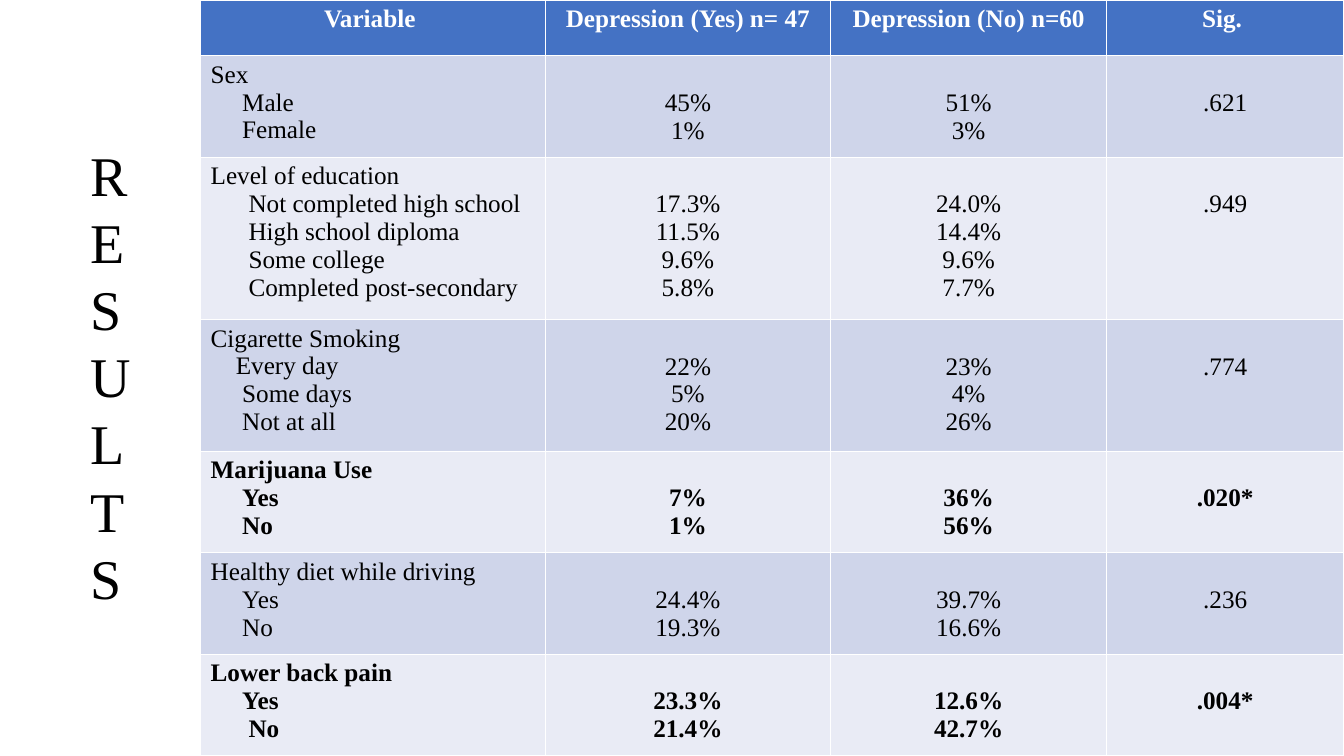
from pptx import Presentation
from pptx.dml.color import RGBColor
from pptx.enum import text
from pptx.util import Pt

TITLE = "RESULTS"
HEADINGS = ["Variable ", "Depression (Yes) n= 47", "Depression (No) n=60", "Sig. "]
# Variable, significance, bold, then (indent in points, option, yes, no)
VARIABLES = [
    ("Sex", ".621", False, [
        (22.5, "Male", "45%", "51%"),
        (22.5, "Female", "1%", "3%")]),
    ("Level of education", ".949", False, [
        (27, "Not completed high school", "17.3%", "24.0%"),
        (27, "High school diploma", "11.5%", "14.4%"),
        (27, "Some college", "9.6%", "9.6%"),
        (27, "Completed post-secondary", "5.8%", "7.7%")]),
    ("Cigarette Smoking", ".774", False, [
        (18, "Every day", "22%", "23%"),
        (22.5, "Some days", "5%", "4%"),
        (22.5, "Not at all", "20%", "26%")]),
    ("Marijuana Use", ".020*", True, [
        (22.5, "Yes", "7%", "36%"),
        (22.5, "No", "1%", "56%")]),
    ("Healthy diet while driving", ".236", False, [
        (22.5, "Yes", "24.4%", "39.7%"),
        (22.5, "No", "19.3%", "16.6%")]),
    ("Lower back pain", ".004*", True, [
        (22.5, "Yes", "23.3%", "12.6%"),
        (27, "No", "21.4%", "42.7%")]),
]

FONT = "Times New Roman"
BLACK = RGBColor(0x00, 0x00, 0x00)
WHITE = RGBColor(0xFF, 0xFF, 0xFF)
HEADER_BLUE = RGBColor(0x44, 0x72, 0xC4)
BANDS = [RGBColor(0xCF, 0xD5, 0xEA), RGBColor(0xE9, 0xEB, 0xF5)]

SLIDE_WIDTH, SLIDE_HEIGHT = 960, 540
TABLE_LEFT = 143.3
COLUMN_WIDTHS = [246.2, 203.8, 197.3, 169.2]
HEADER_HEIGHT = 39.75
ROW_PADDING, ROW_LINE = 7.25, 21.75
CELL_MARGIN, TEXT_LINE = 3.6, 20

LEFT, CENTER = text.PP_ALIGN.LEFT, text.PP_ALIGN.CENTER


def write(frame, lines, size=18, color=BLACK, bold=False, align=CENTER,
          indents=None, spacing=None):
    """Put each line in its own paragraph, indented by the matching entry."""
    for index, line in enumerate(lines):
        paragraph = frame.paragraphs[0] if index == 0 else frame.add_paragraph()
        paragraph.alignment = align
        if spacing:
            paragraph.line_spacing = spacing
            paragraph.space_before = Pt(0)
        if indents and indents[index]:
            properties = paragraph._p.get_or_add_pPr()
            properties.set("marL", str(Pt(indents[index])))
            properties.set("indent", "0")
        run = paragraph.add_run()
        run.text = line
        run.font.name = FONT
        run.font.size = Pt(size)
        run.font.bold = bold
        run.font.color.rgb = color


def fill_cell(cell, lines, fill, top=CELL_MARGIN, **text_format):
    cell.fill.solid()
    cell.fill.fore_color.rgb = fill
    cell.margin_top = Pt(top)
    write(cell.text_frame, lines, **text_format)


def add_title(slide):
    title = slide.shapes.title
    title.left, title.top, title.width, title.height = Pt(57.6), Pt(96.5), Pt(77.8), Pt(346.3)
    frame = title.text_frame
    frame.word_wrap = True
    frame.auto_size = text.MSO_AUTO_SIZE.NONE
    frame.vertical_anchor = text.MSO_ANCHOR.TOP
    write(frame, TITLE, size=40, align=LEFT, spacing=Pt(48))


def add_results_table(slide):
    table = slide.shapes.add_table(
        len(VARIABLES) + 1, len(HEADINGS), Pt(TABLE_LEFT), Pt(0),
        Pt(sum(COLUMN_WIDTHS)), Pt(SLIDE_HEIGHT)).table
    for column, width in zip(table.columns, COLUMN_WIDTHS):
        column.width = Pt(width)
    table.rows[0].height = Pt(HEADER_HEIGHT)
    for column, heading in enumerate(HEADINGS):
        fill_cell(table.cell(0, column), [heading], HEADER_BLUE, color=WHITE, bold=True)

    for row, (variable, significance, bold, options) in enumerate(VARIABLES, start=1):
        indents, labels, yes, no = zip(*options)
        fill = BANDS[(row - 1) % 2]
        table.rows[row].height = Pt(ROW_PADDING + ROW_LINE * (len(options) + 1))
        fill_cell(table.cell(row, 0), [variable, *labels], fill,
                  bold=bold, align=LEFT, indents=[0, *indents])
        # Values start level with the first option, one line below the variable
        for column, values in enumerate([yes, no, [significance]], start=1):
            fill_cell(table.cell(row, column), values, fill,
                      top=CELL_MARGIN + TEXT_LINE, bold=bold)


def main():
    presentation = Presentation()
    presentation.slide_width, presentation.slide_height = Pt(SLIDE_WIDTH), Pt(SLIDE_HEIGHT)
    slide = presentation.slides.add_slide(presentation.slide_layouts[5])
    add_results_table(slide)
    add_title(slide)
    presentation.save("out.pptx")


if __name__ == "__main__":
    main()
